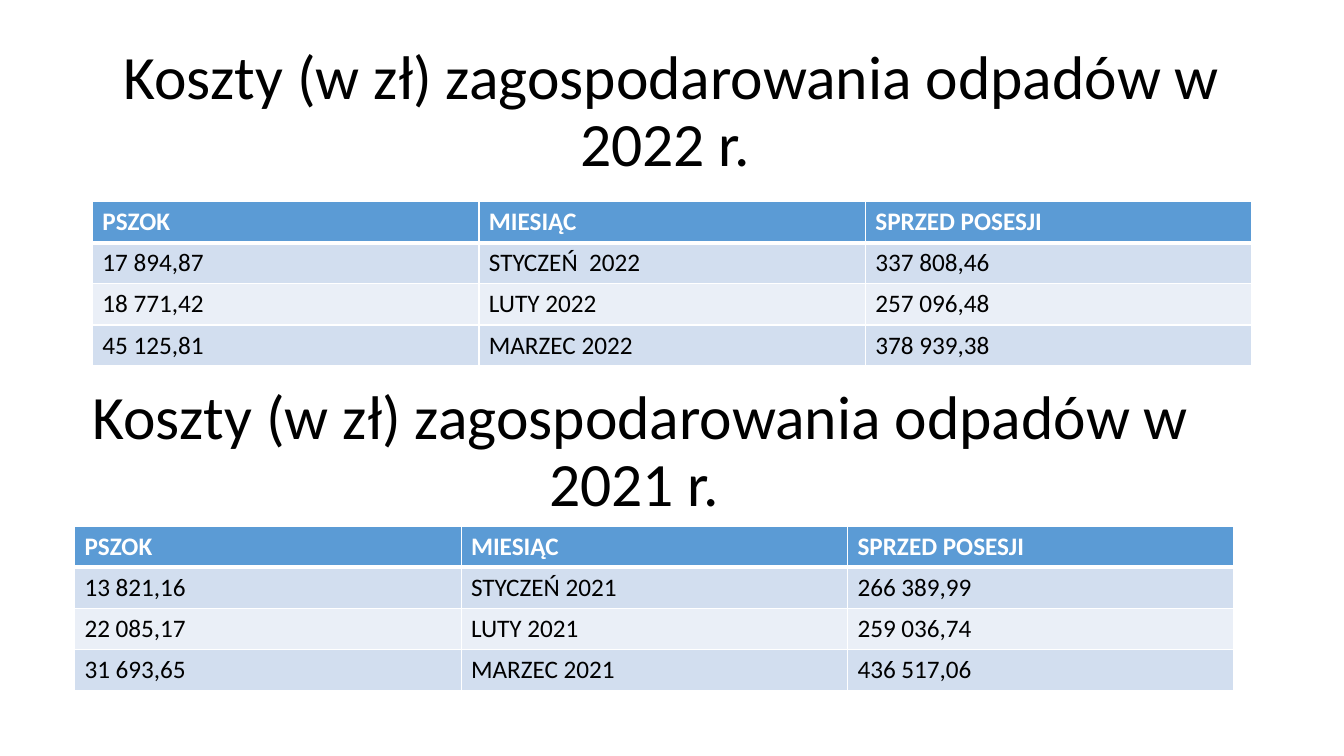
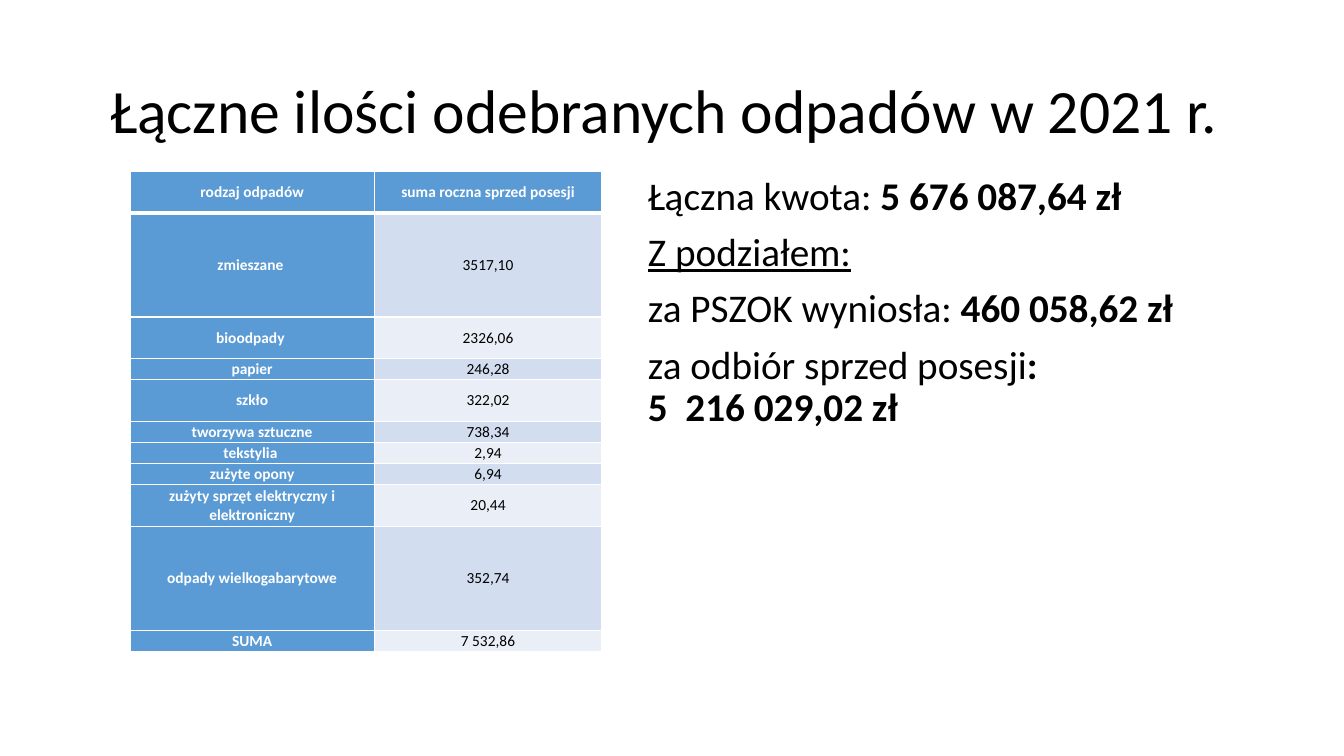
"""Build two slides on the cost and amount of collected waste."""
from dataclasses import dataclass
from typing import NamedTuple

from lxml import etree
from pptx import Presentation
from pptx.dml.color import RGBColor
from pptx.enum.text import MSO_ANCHOR, MSO_AUTO_SIZE, PP_ALIGN
from pptx.oxml.ns import qn
from pptx.util import Cm, Pt

LEFT, CENTER = PP_ALIGN.LEFT, PP_ALIGN.CENTER
TOP, MIDDLE = MSO_ANCHOR.TOP, MSO_ANCHOR.MIDDLE
FIXED = MSO_AUTO_SIZE.NONE
FONT = "Calibri"
COLORS = {
    "text": "000000",
    "white": "FFFFFF",
    "head": "5B9BD5",
    "odd": "D2DEEF",
    "even": "EAEFF7",
}


class Box(NamedTuple):
    left: float
    top: float
    width: float
    height: float


class Span(NamedTuple):
    text: str
    bold: bool = False
    line: bool = False


@dataclass
class Grid:
    left: float
    top: float
    cols: list[float]
    heights: list[float]
    rows: list[tuple[str, ...]]
    size: int = 18
    align: PP_ALIGN = LEFT
    anchor: MSO_ANCHOR = TOP
    side: float = 0.25
    pad: float = 0.13
    stub: bool = False


TITLE = Box(2.33, 1.01, 29.21, 3.68)
LOWER = Box(1.55, 9.58, 29.21, 3.68)
NOTES = Box(16.08, 4.32, 15.44, 12.09)

COST_HEAD = ("PSZOK", "MIESIĄC", "SPRZED POSESJI")
COST_COLS = [9.74] * 3
COST_ROWS = [1.03] * 4
COST_2022 = Grid(2.33, 5.08, COST_COLS, COST_ROWS, [
    COST_HEAD,
    ("17 894,87", "STYCZEŃ  2022", "337 808,46"),
    ("18 771,42", "LUTY 2022", "257 096,48"),
    ("45 125,81", "MARZEC 2022", "378 939,38"),
])
COST_2021 = Grid(1.88, 13.26, COST_COLS, COST_ROWS, [
    COST_HEAD,
    ("13 821,16", "STYCZEŃ 2021", "266 389,99"),
    ("22 085,17", "LUTY 2021", "259 036,74"),
    ("31 693,65", "MARZEC 2021", "436 517,06"),
])

LOW, MID, HIGH = 0.53, 1.05, 2.62
WASTE = Grid(
    3.28, 4.32, [6.15, 5.74],
    [MID, HIGH, MID, LOW, MID, LOW, LOW, LOW, MID, HIGH, LOW],
    [
        ("rodzaj odpadów", "suma roczna sprzed posesji"),
        ("zmieszane ", "3517,10"),
        ("bioodpady ", "2326,06"),
        ("papier", "246,28"),
        ("szkło", "322,02"),
        ("tworzywa sztuczne", "738,34"),
        ("tekstylia ", "2,94"),
        ("zużyte opony", "6,94"),
        ("zużyty sprzęt elektryczny i elektroniczny", "20,44"),
        ("odpady wielkogabarytowe", "352,74"),
        ("SUMA", "7 532,86"),
    ],
    size=11, align=CENTER, anchor=MIDDLE, side=0.13, pad=0, stub=True,
)

BREAK = Span("\n")
TOTALS = [
    [Span("Łączna kwota: "), Span("5 676 087,64 zł", bold=True)],
    [Span("Z podziałem:", line=True)],
    [Span("za PSZOK wyniosła: "), Span("460 058,62 zł", bold=True)],
    [Span("za odbiór sprzed posesji"), Span(": ", bold=True), BREAK,
     Span("5  216 029,02 zł", bold=True)],
]


def paint(font, size: int, color: str = "text", bold: bool = False) -> None:
    font.name = FONT
    font.size = Pt(size)
    font.bold = bold
    font.color.rgb = RGBColor.from_string(COLORS[color])


def place(shape, box: Box) -> None:
    shape.left, shape.top, shape.width, shape.height = map(Cm, box)


def head(shape, text: str, box: Box) -> None:
    place(shape, box)
    frame = shape.text_frame
    frame.text = text
    frame.word_wrap = True
    frame.auto_size = FIXED
    frame.vertical_anchor = MIDDLE
    para = frame.paragraphs[0]
    para.alignment = CENTER
    para.line_spacing = 0.9
    paint(para.runs[0].font, 44)


def edge(cell, side: str, width: float) -> None:
    props = cell._tc.get_or_add_tcPr()
    line = etree.SubElement(props, qn(f"a:ln{side}"), w=str(Pt(width)))
    fill = etree.SubElement(line, qn("a:solidFill"))
    etree.SubElement(fill, qn("a:srgbClr"), val=COLORS["white"])


def draw(slide, grid: Grid) -> None:
    table = slide.shapes.add_table(
        len(grid.rows), len(grid.cols), Cm(grid.left), Cm(grid.top),
        Cm(sum(grid.cols)), Cm(sum(grid.heights))).table
    for col, width in zip(table.columns, grid.cols):
        col.width = Cm(width)
    for row, height in zip(table.rows, grid.heights):
        row.height = Cm(height)
    for r, row in enumerate(grid.rows):
        for c, text in enumerate(row):
            cell = table.cell(r, c)
            for side in "LRTB":
                thick = (r, side) in ((0, "B"), (1, "T"))
                edge(cell, side, 3 if thick else 1)
            strong = r == 0 or (grid.stub and c == 0)
            tone = "head" if strong else "odd" if r % 2 else "even"
            cell.fill.solid()
            cell.fill.fore_color.rgb = RGBColor.from_string(COLORS[tone])
            cell.margin_left = cell.margin_right = Cm(grid.side)
            cell.margin_top = cell.margin_bottom = Cm(grid.pad)
            cell.vertical_anchor = grid.anchor
            cell.text_frame.text = text
            para = cell.text_frame.paragraphs[0]
            para.alignment = grid.align
            paint(para.runs[0].font, grid.size,
                  "white" if strong else "text", strong)


def write(slide, box: Box, lines: list[list[Span]]) -> None:
    frame = slide.shapes.add_textbox(*map(Cm, box)).text_frame
    frame.word_wrap = True
    for i, spans in enumerate(lines):
        para = frame.add_paragraph() if i else frame.paragraphs[0]
        para.line_spacing = 0.9
        para.space_before = Pt(10)
        for span in spans:
            if span == BREAK:
                para.add_line_break()
                continue
            run = para.add_run()
            run.text = span.text
            paint(run.font, 28, bold=span.bold)
            run.font.underline = span.line


def main() -> None:
    deck = Presentation()
    deck.slide_width, deck.slide_height = Cm(33.87), Cm(19.05)
    layout = deck.slide_layouts[5]

    costs = deck.slides.add_slide(layout)
    cost = "Koszty (w zł) zagospodarowania odpadów w {} r. "
    head(costs.shapes.title, cost.format(2022), TITLE)
    draw(costs, COST_2022)
    head(costs.shapes.add_textbox(*map(Cm, LOWER)), cost.format(2021), LOWER)
    draw(costs, COST_2021)

    waste = deck.slides.add_slide(layout)
    head(waste.shapes.title, "Łączne ilości odebranych odpadów w 2021 r. ", TITLE)
    draw(waste, WASTE)
    write(waste, NOTES, TOTALS)

    deck.save("out.pptx")


if __name__ == "__main__":
    main()
